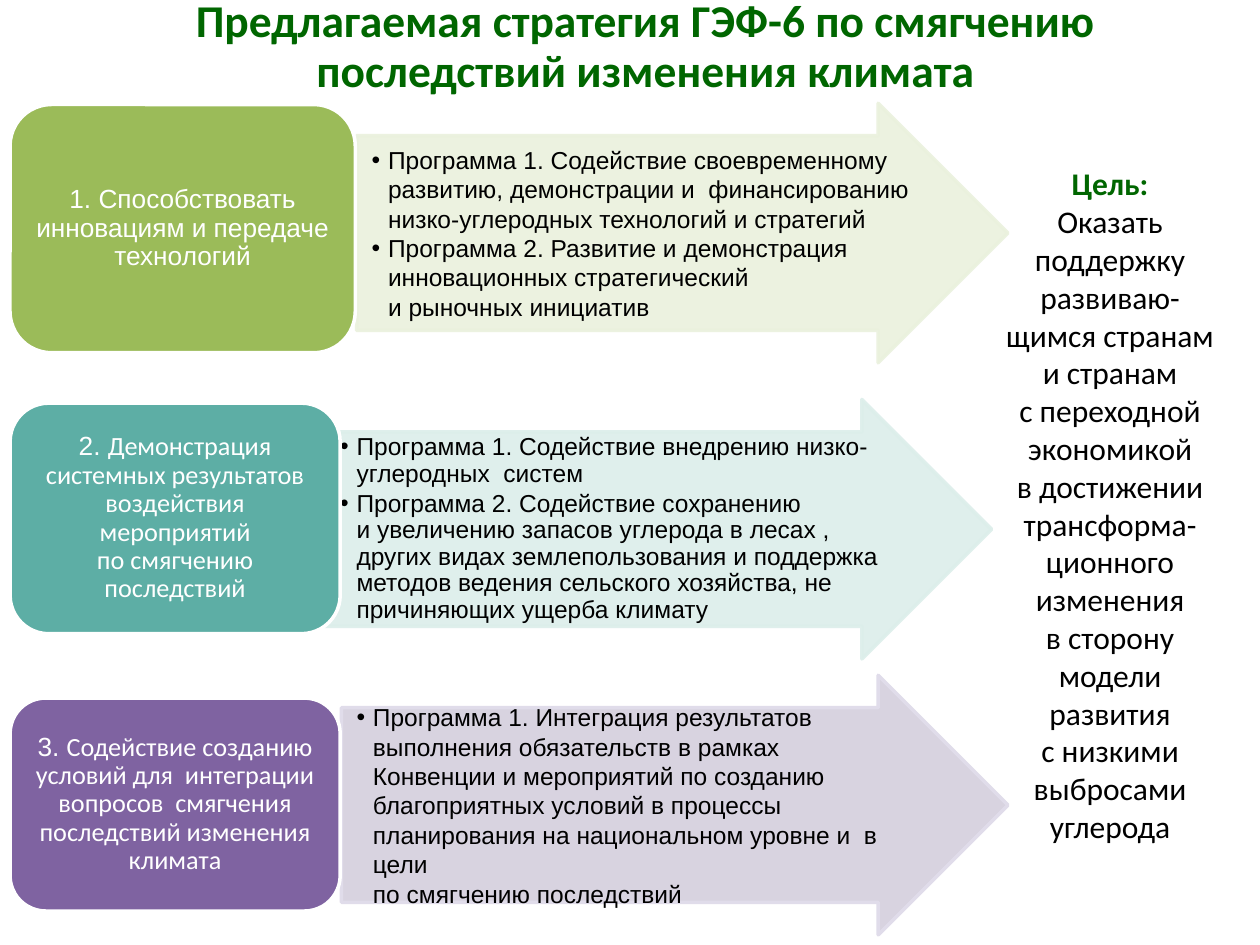
"""Build the slide on the proposed GEF-6 climate change mitigation strategy."""
from dataclasses import dataclass
from typing import Optional

from lxml.etree import SubElement
from pptx import Presentation
from pptx.dml.color import RGBColor
from pptx.enum.shapes import MSO_SHAPE as Preset
from pptx.enum.text import MSO_ANCHOR as Anchor, PP_ALIGN as Align
from pptx.oxml.ns import qn
from pptx.util import Inches, Pt

Box = tuple[float, float, float, float]
Span = tuple[str, str]

GREEN, BLACK, WHITE = "006600", "000000", "FFFFFF"


@dataclass
class Objective:
    """One objective with the programmes that serve it."""
    label_box: Box
    label_fill: str
    label: list[Span]
    arrow_box: Box
    arrow_fill: str
    arrow_line: str
    programmes: list[str]
    opacity: Optional[int] = None
    spacing: Optional[dict] = None


OBJECTIVES = [
    Objective(
        (0.08, 0.83, 2.74, 1.97), "9BBB59",
        [("1. Способствовать\nинновациям и передаче\nтехнологий", "Arial")],
        (2.83, 0.82, 5.17, 2.06), "EAF1DD", "EAF1DD",
        ["Программа 1. Содействие своевременному развитию, демонстрации и  "
         "финансированию низко-углеродных технологий и стратегий",
         "Программа 2. Развитие и демонстрация инновационных стратегический\n"
         "и рыночных инициатив"],
        opacity=90),
    Objective(
        (0.08, 3.2, 2.62, 1.83), "5DAEA5",
        [("2. ", "Arial"),
         ("Демонстрация системных результатов воздействия мероприятий\n"
          "по смягчению последствий", "Calibri")],
        (2.58, 3.17, 5.29, 2.06), "DCEEEA", "DCEEEA",
        ["Программа 1. Содействие внедрению низко-углеродных  систем",
         "Программа 2. Содействие сохранению\nи увеличению запасов углерода "
         "в лесах , других видах землепользования и поддержка методов ведения "
         "сельского хозяйства, не причиняющих ущерба климату"],
        opacity=90, spacing={"line_spacing": 0.9, "space_after": Pt(2.1)}),
    Objective(
        (0.08, 5.54, 2.62, 1.69), "7F63A1",
        [("3. ", "Arial"),
         ("Содействие созданию условий для  интеграции вопросов  смягчения "
          "последствий изменения климата", "Calibri")],
        (2.71, 5.36, 5.29, 2.06), "D8D3E0", "E0DCEA",
        ["Программа 1. Интеграция результатов выполнения обязательств в рамках "
         "Конвенции и мероприятий по созданию благоприятных условий в процессы "
         "планирования на национальном уровне и  в цели\n"
         "по смягчению последствий"]),
]


def apply(target, formats: dict) -> None:
    """Set every format value as an attribute of the target."""
    for name, value in formats.items():
        setattr(target, name, value)


def paint(fill, colour: str, opacity: Optional[int] = None) -> None:
    """Make a fill solid, with an optional opacity in percent."""
    fill.solid()
    fill.fore_color.rgb = RGBColor.from_string(colour)
    if opacity is not None:
        solid = fill._xPr.find(qn("a:solidFill"))
        SubElement(solid[0], qn("a:alpha"), val=str(opacity * 1000))


def set_frame(frame, side: float, edge: float) -> None:
    """Wrap and centre a text frame vertically with the given insets."""
    apply(frame, {
        "word_wrap": True, "vertical_anchor": Anchor.MIDDLE,
        "margin_left": Inches(side), "margin_right": Inches(side),
        "margin_top": Inches(edge), "margin_bottom": Inches(edge)})


def write(paragraph, spans: list[Span], size: float, colour: str,
          bold: bool = False, **formats) -> None:
    """Write font spans into a paragraph, with line breaks at newlines."""
    apply(paragraph, formats)
    for text, family in spans:
        for index, line in enumerate(text.split("\n")):
            if index:
                paragraph.add_line_break()
            run = paragraph.add_run()
            run.text = line
            apply(run.font, {"name": family, "size": Pt(size), "bold": bold})
            paint(run.font.fill, colour)


def add_bullet(paragraph) -> None:
    """Give a paragraph a hanging black bullet."""
    properties = paragraph._p.get_or_add_pPr()
    properties.set("marL", str(Inches(0.24)))
    properties.set("indent", str(Inches(-0.13)))
    SubElement(SubElement(properties, qn("a:buClr")), qn("a:srgbClr"), val=BLACK)
    SubElement(properties, qn("a:buSzPct"), val="101000")
    SubElement(properties, qn("a:buFont"), typeface="Arial")
    SubElement(properties, qn("a:buChar"), char="•")


def add_panel(slide, preset, box: Box, adjustments: list[float], fill: str,
              line: str, opacity: Optional[int] = None):
    """Add a filled and outlined preset shape."""
    panel = slide.shapes.add_shape(preset, *map(Inches, box))
    panel.shadow.inherit = False
    for index, value in enumerate(adjustments):
        panel.adjustments[index] = value
    paint(panel.fill, fill, opacity)
    paint(panel.line.fill, line, opacity)
    panel.line.width = Pt(2)
    return panel


def add_text(slide, box: Box):
    """Add a wrapped text box and return its frame."""
    frame = slide.shapes.add_textbox(*map(Inches, box)).text_frame
    set_frame(frame, 0.1, 0.05)
    return frame


def draw_objective(slide, objective: Objective) -> None:
    """Draw the programme arrow and the objective label over its tail."""
    arrow = add_panel(slide, Preset.RIGHT_ARROW, objective.arrow_box, [0.75, 0.5],
                      objective.arrow_fill, objective.arrow_line,
                      objective.opacity).text_frame
    set_frame(arrow, 0.01, 0.01)
    for index, programme in enumerate(objective.programmes):
        paragraph = arrow.add_paragraph() if index else arrow.paragraphs[0]
        apply(paragraph, {"level": 1, "alignment": Align.LEFT,
                          **(objective.spacing or {})})
        add_bullet(paragraph)
        write(paragraph, [(programme, "Arial")], 14, BLACK)

    label = add_panel(slide, Preset.ROUNDED_RECTANGLE, objective.label_box, [0.167],
                      objective.label_fill, WHITE).text_frame
    set_frame(label, 0.06, 0.03)
    write(label.paragraphs[0], objective.label, 15, WHITE, alignment=Align.CENTER,
          line_spacing=0.9, space_after=Pt(5.2))


def main() -> None:
    """Build and save the slide."""
    deck = Presentation()
    apply(deck, {"slide_width": Inches(10), "slide_height": Inches(7.5)})
    slide = deck.slides.add_slide(deck.slide_layouts[6])

    title = add_text(slide, (0.5, 0.03, 9.25, 0.7))
    write(title.paragraphs[0],
          [("Предлагаемая стратегия ГЭФ-6 по смягчению последствий "
            "изменения климата", "Calibri")],
          26, GREEN, bold=True, alignment=Align.CENTER, line_spacing=0.9)

    for objective in OBJECTIVES:
        draw_objective(slide, objective)

    goal = add_text(slide, (7.85, 1.23, 1.92, 5.55))
    write(goal.paragraphs[0], [("Цель:", "Calibri")], 18, GREEN, bold=True,
          alignment=Align.CENTER)
    write(goal.add_paragraph(),
          [("Оказать поддержку развиваю-щимся странам\nи странам\n"
            "с переходной экономикой\nв достижении трансформа-ционного "
            "изменения\nв сторону модели развития\n"
            "с низкими выбросами углерода", "Calibri")],
          18, BLACK, alignment=Align.CENTER)

    deck.save("out.pptx")


if __name__ == "__main__":
    main()
